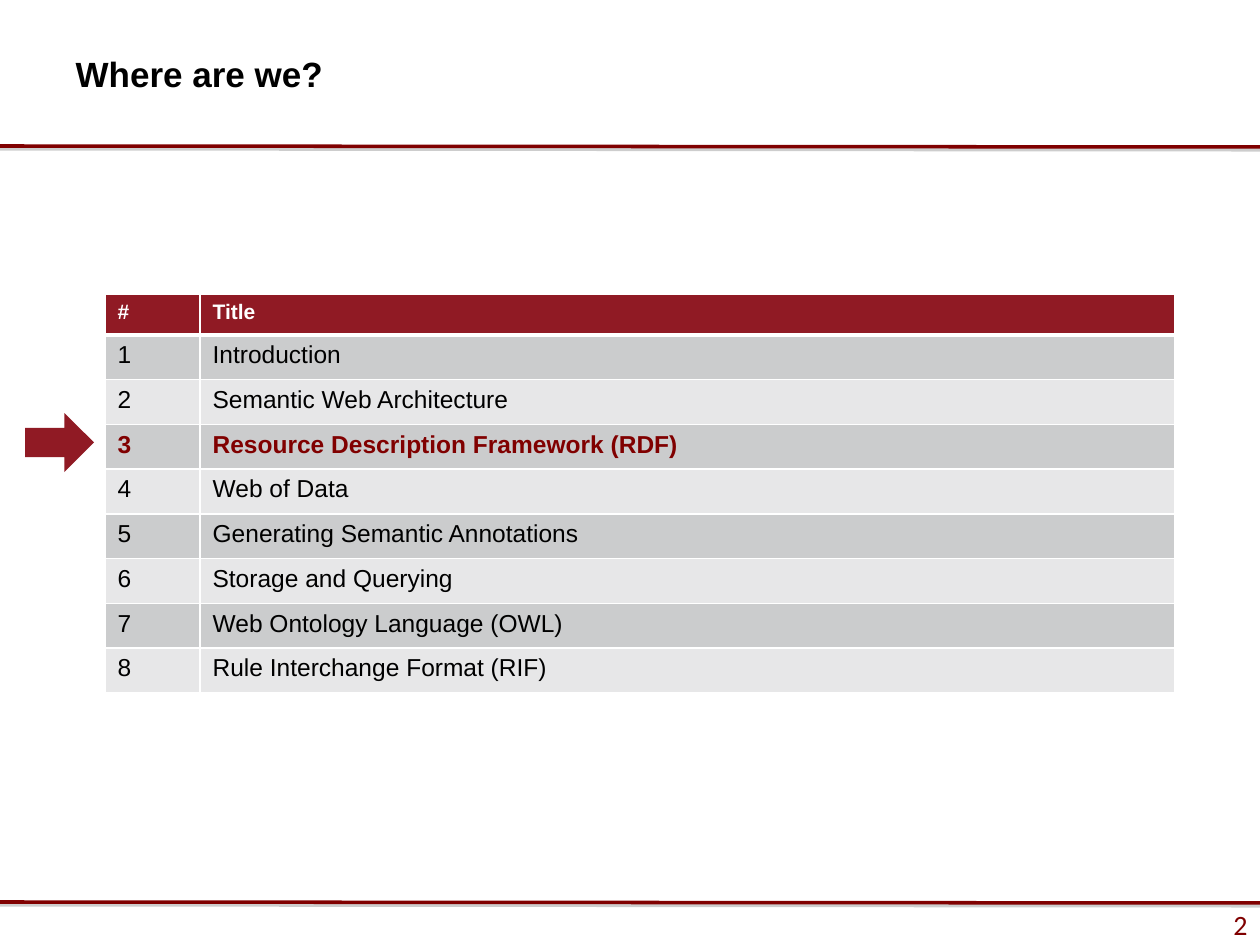
"""Build the course outline slide with the current chapter marked."""
from dataclasses import dataclass

from lxml import etree
from pptx import Presentation
from pptx.dml.color import RGBColor
from pptx.enum.shapes import MSO_CONNECTOR, MSO_SHAPE
from pptx.enum.text import MSO_ANCHOR, PP_ALIGN
from pptx.oxml import parse_xml
from pptx.oxml.ns import nsdecls, qn
from pptx.util import Pt

LINE = MSO_CONNECTOR.STRAIGHT
RECT, ARROW = MSO_SHAPE.RECTANGLE, MSO_SHAPE.RIGHT_ARROW
MIDDLE = MSO_ANCHOR.MIDDLE
LEFT, RIGHT = PP_ALIGN.LEFT, PP_ALIGN.RIGHT
SCALE = 914400 / 126


@dataclass(frozen=True)
class Theme:
    black: str = "000000"
    white: str = "FFFFFF"
    maroon: str = "800000"
    red: str = "901A24"
    dark: str = "CBCCCD"
    light: str = "E7E7E8"
    shade: str = "808080"
    font: str = "Arial"
    num_font: str = "Calibri"
    title: int = 20
    head: int = 12
    body: int = 14
    number: int = 16


theme = Theme()


def px(*sides):
    return [round(side * SCALE) for side in sides]


def style(para, size, color, bold=False, font=theme.font):
    para.font.size = Pt(size)
    para.font.bold = bold
    para.font.name = font
    para.font.color.rgb = RGBColor.from_string(color)


deck = Presentation()
deck.slide_width, deck.slide_height = px(1260, 945)
slide = deck.slides.add_slide(deck.slide_layouts[5])
shapes = slide.shapes

title = shapes.title
title.left, title.top, title.width, title.height = px(63, 42, 798, 63)
title.text_frame.text = "Where are we?"
title.text_frame.vertical_anchor = MIDDLE
title.text_frame.paragraphs[0].alignment = LEFT
style(title.text_frame.paragraphs[0], theme.title, theme.black, True)

footer = shapes.add_shape(RECT, *px(0, 909, 1260, 31))
pointer = shapes.add_shape(ARROW, *px(25, 413, 69, 59))
for shape, color in ((footer, theme.white), (pointer, theme.red)):
    shape.shadow.inherit = False
    shape.fill.solid()
    shape.fill.fore_color.rgb = RGBColor.from_string(color)
    shape.line.fill.background()

frame = footer.text_frame
frame.word_wrap = False
frame.vertical_anchor = MIDDLE
frame.text = "2"
frame.paragraphs[0].alignment = RIGHT
style(frame.paragraphs[0], theme.number, theme.maroon, font=theme.num_font)

for top in (146, 902):
    rule = shapes.add_connector(LINE, *px(0, top, 1260, top + 1))
    rule.line.color.rgb = RGBColor.from_string(theme.maroon)
    rule.line.width = Pt(2)
    rule._element.spPr.append(parse_xml(
        f'<a:effectLst {nsdecls("a")}>'
        '<a:outerShdw blurRad="0" dist="20000" dir="5400000" rotWithShape="0">'
        f'<a:srgbClr val="{theme.shade}"><a:alpha val="38000"/></a:srgbClr>'
        '</a:outerShdw></a:effectLst>'))

topics = [
    "Introduction",
    "Semantic Web Architecture",
    "Resource Description Framework (RDF)",
    "Web of Data",
    "Generating Semantic Annotations",
    "Storage and Querying",
    "Web Ontology Language (OWL)",
    "Rule Interchange Format (RIF)",
]
current = 3
rows = [("#", "Title")] + [(str(n), topic) for n, topic in enumerate(topics, 1)]
table = shapes.add_table(len(rows), 2, *px(105, 294, 1070, 399)).table
table.columns[0].width, table.columns[1].width = px(95, 975)
head, body = px(41, 358)

for r, row in enumerate(rows):
    table.rows[r].height = body // len(topics) if r else head
    if r == 0:
        fill, look = theme.red, (theme.head, theme.white, True)
    else:
        fill = theme.dark if r % 2 else theme.light
        color = theme.maroon if r == current else theme.black
        look = (theme.body, color, r == current)
    widths = {"L": 1, "R": 1, "T": 3 if r == 1 else 1, "B": 1 if r else 3}
    for c, text in enumerate(row):
        cell = table.cell(r, c)
        cell.text = text
        style(cell.text_frame.paragraphs[0], *look)
        props = cell._tc.get_or_add_tcPr()
        for side, width in widths.items():
            edge = etree.SubElement(props, qn(f"a:ln{side}"), w=str(Pt(width)))
            paint = etree.SubElement(edge, qn("a:solidFill"))
            etree.SubElement(paint, qn("a:srgbClr"), val=theme.white)
        cell.fill.solid()
        cell.fill.fore_color.rgb = RGBColor.from_string(fill)

deck.save("out.pptx")
